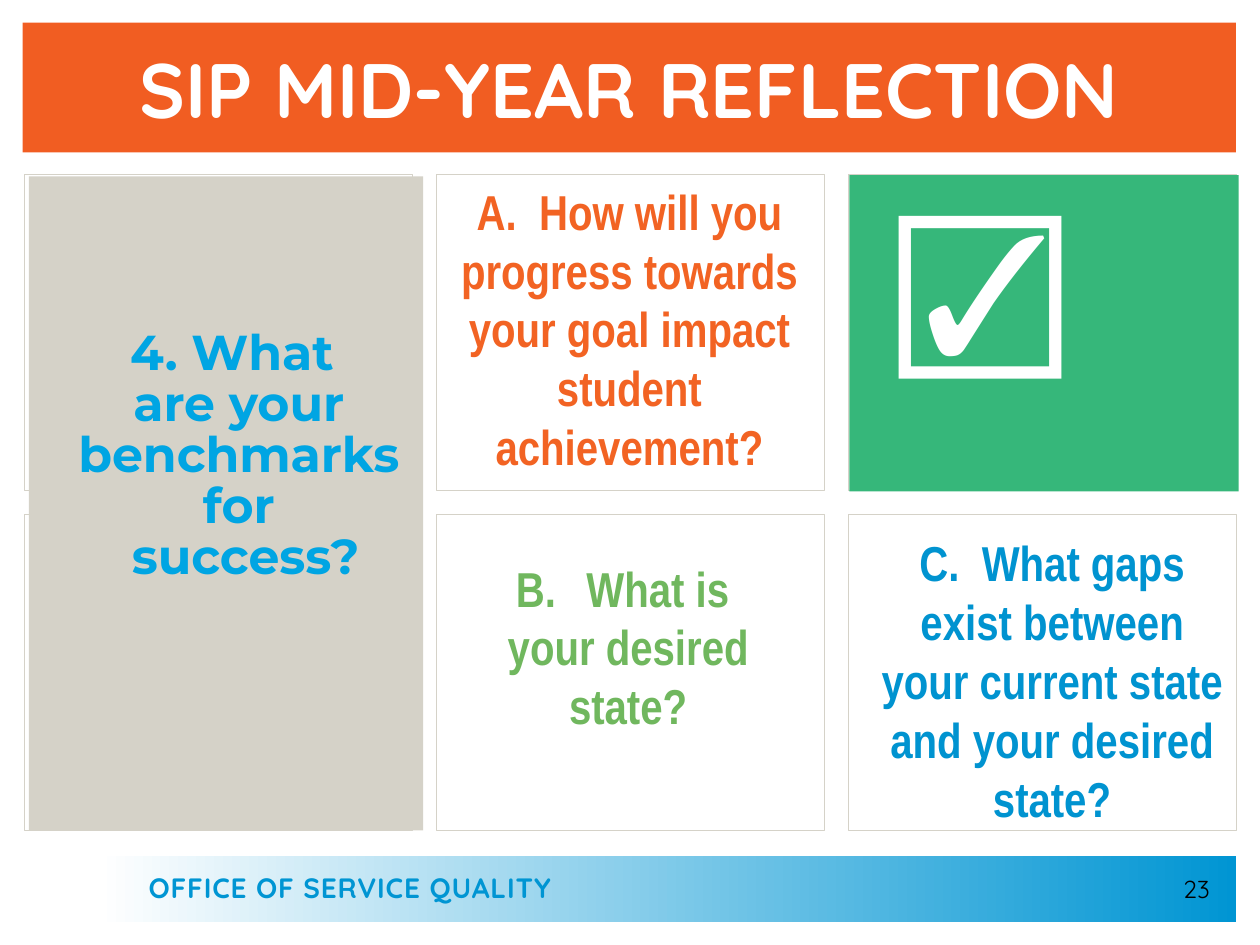
import pptx
import pptx.util
import pptx.dml.color
import pptx.enum.shapes
import pptx.enum.text
import pptx.oxml.ns
import lxml.etree

Inches = pptx.util.Inches
Pt = pptx.util.Pt
ALIGN = pptx.enum.text.PP_ALIGN
ANCHOR = pptx.enum.text.MSO_ANCHOR
DEFAULT_INSETS = (0.1, 0.05, 0.1, 0.05)
BEIGE = "D5D2C8"
BLUE = "0095D3"


def rgb(value):
    return pptx.dml.color.RGBColor.from_string(value)


def set_attrs(obj, values):
    for name, value in values.items():
        setattr(obj, name, value)


def add_rect(s, box, fill=None, line=None):
    sp = s.shapes.add_shape(
        pptx.enum.shapes.MSO_SHAPE.RECTANGLE, *map(Inches, box))
    sp.shadow.inherit = False
    if fill:
        sp.fill.solid()
        sp.fill.fore_color.rgb = rgb(fill)
    else:
        sp.fill.background()
    if line:
        sp.line.color.rgb = rgb(line)
        sp.line.width = Pt(0.25)
    else:
        sp.line.fill.background()
    return sp


def write(sp, lines, font, size, color, bold=True, insets=DEFAULT_INSETS,
          anchor=ANCHOR.TOP, para=None, number_from=None):
    tf = sp.text_frame
    left, top, right, bottom = map(Inches, insets)
    set_attrs(tf, dict(word_wrap=True, vertical_anchor=anchor,
                       margin_left=left, margin_top=top,
                       margin_right=right, margin_bottom=bottom))
    for i, line in enumerate(lines):
        p = tf.paragraphs[0] if i == 0 else tf.add_paragraph()
        set_attrs(p, para or {"alignment": ALIGN.CENTER})
        if i == 0:
            p.space_before = Pt(0)
            if number_from:
                add_number(p, number_from)
        r = p.add_run()
        r.text = line
        set_attrs(r.font, dict(name=font, size=Pt(size), bold=bold))
        r.font.color.rgb = rgb(color)
    return tf


def add_number(p, start):
    pPr = p._p.get_or_add_pPr()
    indent = Inches(0.56)
    pPr.set("marL", str(indent))
    pPr.set("indent", str(-indent))
    lxml.etree.SubElement(pPr, pptx.oxml.ns.qn("a:buAutoNum"),
                          type="alphaUcPeriod", startAt=str(start))


def add_textbox(s, box, lines, font, size, color, **options):
    sp = s.shapes.add_textbox(*map(Inches, box))
    return write(sp, lines, font, size, color, **options)


def add_footer(s, box):
    x, y, w, h = box
    band = add_rect(s, box)
    band.fill.gradient()
    band.fill.gradient_angle = 0
    for stop, color, position in zip(
            band.fill.gradient_stops, ("FFFFFF", BLUE), (0, 1)):
        stop.color.rgb = rgb(color)
        stop.position = position
    tf = add_textbox(s, (x + 0.4, y + 0.11, 4.37, 0.29),
                     ["OFFICE OF SERVICE QUALITY"], "Quicksand", 16, BLUE,
                     insets=(0, 0, 0, 0), anchor=ANCHOR.MIDDLE,
                     para={"alignment": ALIGN.LEFT})
    tf.paragraphs[0].runs[0]._r.get_or_add_rPr().set("spc", "50")
    add_textbox(s, (x + w - 2.44, y + 0.06, 2.33, 0.4), ["23"],
                "Quicksand", 14, "000000", bold=False, anchor=ANCHOR.MIDDLE,
                para={"alignment": ALIGN.RIGHT})


def add_title(s, box):
    x, y, w, h = box
    add_rect(s, box, "F15D22")
    add_textbox(s, (x + 0.83, y + 0.1, 8.54, 0.84),
                ["SIP MID-YEAR REFLECTION"], "Quicksand", 44, "FFFFFF",
                para={"alignment": ALIGN.LEFT})


def add_grid(s, box, columns=3, rows=2, gap=0.19):
    x, y, w, h = box
    cell_w = (w - gap * (columns - 1)) / columns
    cell_h = (h - gap * (rows - 1)) / rows
    for row in range(rows):
        for column in range(columns):
            add_rect(s, (x + column * (cell_w + gap),
                         y + row * (cell_h + gap), cell_w, cell_h),
                     line=BEIGE)


def add_panels(s):
    spaced = dict(alignment=ALIGN.CENTER, line_spacing=Pt(21.2),
                  space_before=Pt(8))
    topic = add_rect(s, (0.23, 1.4, 3.13, 5.19), BEIGE)
    write(topic, ["4. What ", "are your", "benchmarks", "for", " success?"],
          "Montserrat", 28, "00A5E3", insets=(0.3, 1.32, 0.1, 0.05),
          para=spaced)
    check = add_rect(s, (6.74, 1.39, 3.09, 2.51), "36B77A")
    write(check, ["☑"], "Arial", 96, "FFFFFF", bold=False,
          insets=(0.2, 1.32, 1.21, 0.05), para=spaced)


def add_questions(s):
    questions = [
        ((3.49, 1.39, 3.01, 2.76),
         ["A.  How will you progress towards your goal impact "
          "student achievement?"], "F26323", {}),
        ((3.53, 4.38, 2.91, 1.51),
         ["What is ", "your desired state?"], "70B75E", {"number_from": 2}),
        ((6.83, 3.88, 3.04, 2.76),
         ["C.  What gaps exist between your current state "
          "and your desired state?"], "0093D0",
         {"insets": (0.1, 0.35, 0.1, 0.05)}),
    ]
    for box, lines, color, options in questions:
        add_textbox(s, box, lines, "Arial Narrow", 28, color, **options)


def main():
    prs = pptx.Presentation()
    prs.slide_width = Inches(10)
    prs.slide_height = Inches(7.5)
    s = prs.slides.add_slide(prs.slide_layouts[6])
    add_footer(s, (0.78, 6.79, 9.03, 0.53))
    add_title(s, (0.18, 0.18, 9.63, 1.03))
    add_grid(s, (0.19, 1.38, 9.62, 5.21))
    add_panels(s)
    add_questions(s)
    prs.save("out.pptx")


if __name__ == "__main__":
    main()
